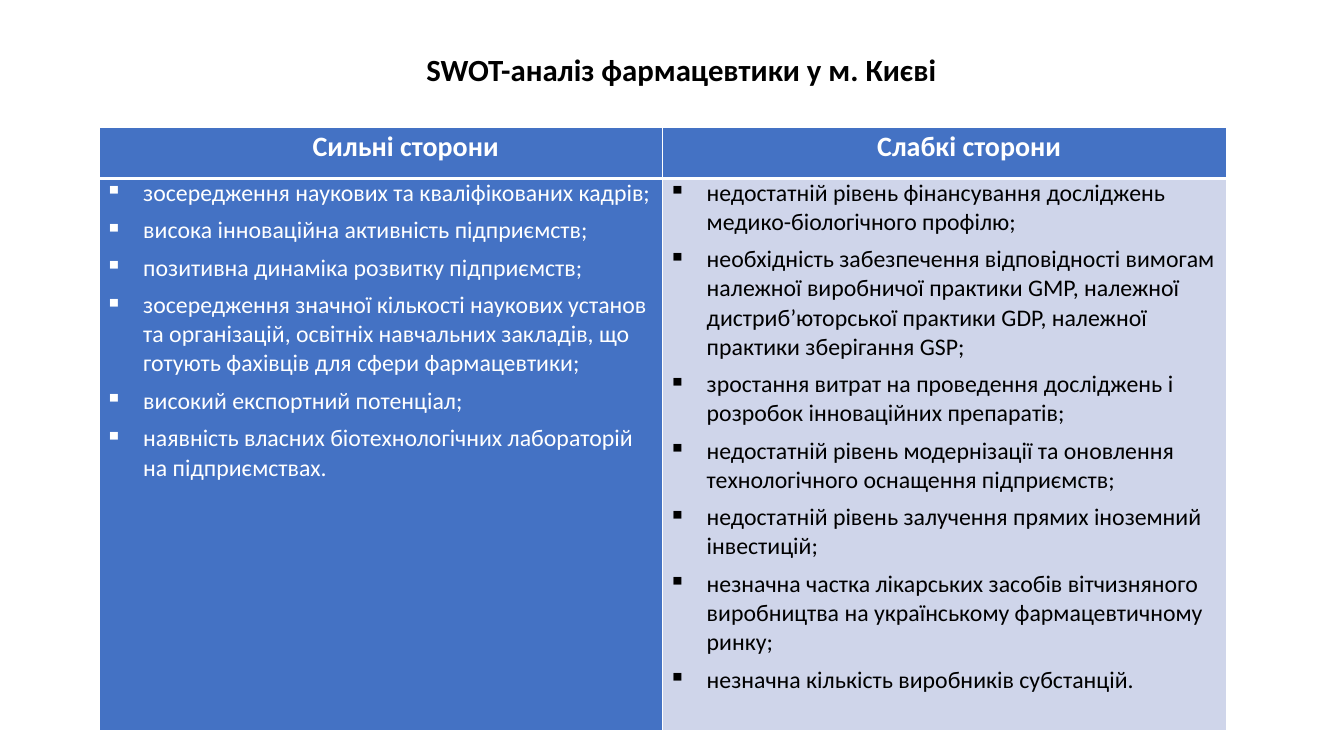
from lxml.etree import SubElement
from pptx import Presentation
from pptx.dml.color import RGBColor
from pptx.enum.text import MSO_ANCHOR, MSO_AUTO_SIZE, PP_ALIGN
from pptx.oxml import parse_xml
from pptx.oxml.ns import nsdecls, qn
from pptx.util import Cm, Pt

BLUE, PALE, WHITE, BLACK = "4472C4", "CFD5EA", "FFFFFF", "000000"
HEADING = "SWOT-аналіз фармацевтики у м. Києві"
STRENGTHS = [
    "зосередження наукових та кваліфікованих кадрів;",
    "висока інноваційна активність підприємств;",
    "позитивна динаміка розвитку підприємств;",
    "зосередження значної кількості наукових установ та організацій, освітніх навчальних закладів, "
    "що готують фахівців для сфери фармацевтики;",
    "високий експортний потенціал;",
    "наявність власних біотехнологічних лабораторій на підприємствах.",
]
WEAKNESSES = [
    "недостатній рівень фінансування досліджень медико-біологічного профілю;",
    "необхідність забезпечення відповідності вимогам належної виробничої практики GMP, належної "
    "дистриб’юторської практики GDP, належної практики зберігання GSP;",
    "зростання витрат на проведення досліджень і розробок інноваційних препаратів;",
    "недостатній рівень модернізації та оновлення технологічного оснащення підприємств;",
    "недостатній рівень залучення прямих іноземний інвестицій;",
    "незначна частка лікарських засобів вітчизняного виробництва на українському "
    "фармацевтичному ринку;",
    "незначна кількість виробників субстанцій.",
]
COLUMNS = [
    ("Сильні сторони", STRENGTHS, BLUE, WHITE),
    ("Слабкі сторони", WEAKNESSES, PALE, BLACK),
]


def color(value):
    return RGBColor.from_string(value)


def write(frame, lines, size, ink, bold=False, align=PP_ALIGN.LEFT, spacing=1.0,
          after=0, margin=0, indent=0, bullet=None):
    for index, line in enumerate(lines):
        para = frame.add_paragraph() if index else frame.paragraphs[0]
        para.alignment = align
        para.line_spacing = spacing
        para.space_before = Pt(0)
        para.space_after = Pt(after)
        properties = para._p.get_or_add_pPr()
        properties.set("marL", str(Cm(margin)))
        properties.set("indent", str(Cm(indent)))
        if bullet:
            SubElement(properties, qn("a:buChar")).set("char", bullet)
        span = para.add_run()
        span.text = line
        span.font.name = "Calibri"
        span.font.size = Pt(size)
        span.font.bold = bold
        span.font.color.rgb = color(ink)


def style_cell(cell, fill, top=1, bottom=1):
    cell.margin_left = cell.margin_right = Cm(0.15)
    cell.margin_top = cell.margin_bottom = 0
    cell.vertical_anchor = MSO_ANCHOR.TOP
    cell.fill.solid()
    cell.fill.fore_color.rgb = color(fill)
    properties = cell._tc.get_or_add_tcPr()
    edges = {"lnL": 1, "lnR": 1, "lnT": top, "lnB": bottom}
    for index, (edge, width) in enumerate(edges.items()):
        properties.insert(index, parse_xml(
            f'<a:{edge} {nsdecls("a")} w="{Pt(width)}"><a:solidFill>'
            f'<a:srgbClr val="{WHITE}"/></a:solidFill></a:{edge}>'))


def place_title(page, left, top, width, height):
    title = page.shapes.title
    title.left, title.top, title.width, title.height = map(Cm, (left, top, width, height))
    frame = title.text_frame
    frame.word_wrap = True
    frame.auto_size = MSO_AUTO_SIZE.NONE
    frame.vertical_anchor = MSO_ANCHOR.MIDDLE
    write(frame, [HEADING], 22, BLACK, bold=True, align=PP_ALIGN.CENTER, spacing=0.9)


def place_table(page, left, top, width, height, header=1.3):
    box = page.shapes.add_table(2, len(COLUMNS), *map(Cm, (left, top, width, height)))
    table = box.table
    table.rows[0].height = Cm(header)
    table.rows[1].height = Cm(height - header)
    for index, (name, points, fill, ink) in enumerate(COLUMNS):
        head, body = table.cell(0, index), table.cell(1, index)
        style_cell(head, BLUE, bottom=3)
        write(head.text_frame, [name], 20, WHITE, bold=True, align=PP_ALIGN.CENTER,
              spacing=1.07, indent=1.25)
        style_cell(body, fill, top=3)
        write(body.text_frame, points, 17, ink, after=6, margin=0.96, indent=-0.96, bullet="▪")


def main():
    deck = Presentation()
    deck.slide_width, deck.slide_height = Cm(33.87), Cm(19.05)
    page = deck.slides.add_slide(deck.slide_layouts[5])
    place_title(page, 0.81, 1.02, 32.72, 1.55)
    place_table(page, 2.5, 3.2, 28.4, 15.2)
    deck.save("out.pptx")


if __name__ == "__main__":
    main()
